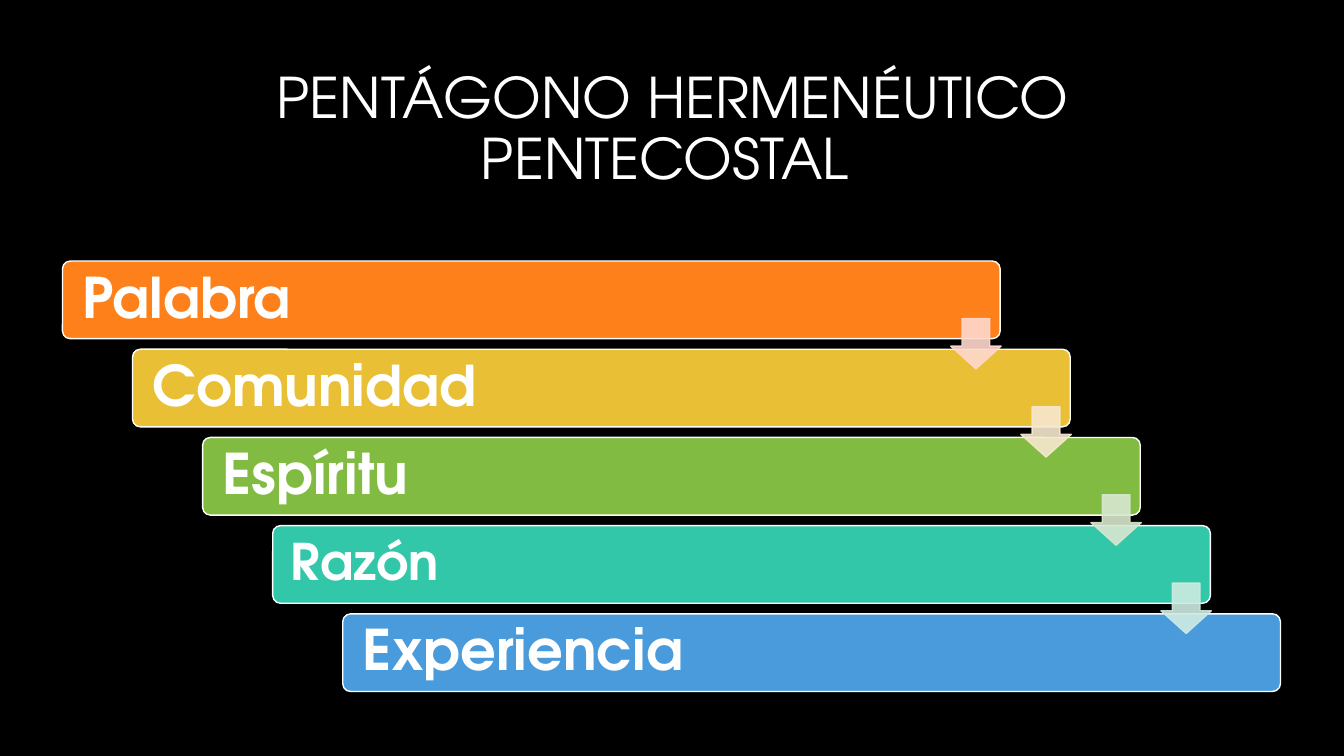
from dataclasses import dataclass

from lxml.etree import SubElement
from pptx import Presentation
from pptx.dml.color import RGBColor
from pptx.enum.shapes import MSO_SHAPE as Preset
from pptx.enum.text import MSO_ANCHOR as Anchor, PP_ALIGN as Align
from pptx.oxml.ns import qn
from pptx.shapes.autoshape import Shape
from pptx.slide import Slide
from pptx.util import Inches, Pt

COLOURS = {
    "black": "000000", "white": "FFFFFF",
    "orange": "FE801A", "yellow": "E9BF35", "green": "81BB42",
    "teal": "32C7A9", "blue": "4A9BDC",
    "pale orange": "FFD8CD", "pale yellow": "F7E8CE",
    "pale green": "D8E7CF", "pale teal": "CEEBE2",
}
FONT = "TeX Gyre Adventor"
BAR_LEFT, BAR_TOP, BAR_WIDTH, BAR_HEIGHT = 0.62, 2.59, 9.3, 0.77
ARROW_LEFT, ARROW_TOP, ARROW_SIZE = 9.43, 3.16, 0.5
STEP_X = (3.4 - BAR_LEFT) / 4
STEP_Y = (6.09 - BAR_TOP) / 4
LABEL_INDENT = 0.03


@dataclass(frozen=True)
class Stage:
    name: str
    colour: str
    arrow_colour: str = ""
    size: int = 40
    inset: float = 0.17
    label_width: float = 8.07


STAGES = [
    Stage("Palabra", "orange", "pale orange", label_width=8.39),
    Stage("Comunidad", "yellow", "pale yellow"),
    Stage("Espíritu", "green", "pale green"),
    Stage("Razón", "teal", "pale teal", size=36, inset=0.15),
    Stage("Experiencia", "blue"),
]


def rgb(colour: str) -> RGBColor:
    return RGBColor.from_string(COLOURS[colour])


def add_text(slide: Slide, text: str, left: float, top: float, width: float,
             height: float, *, size: int = 40, bold: bool = False,
             align: Align = Align.LEFT, inset_x: float = 0.1,
             inset_y: float = 0.05) -> None:
    frame = slide.shapes.add_textbox(
        Inches(left), Inches(top), Inches(width), Inches(height)).text_frame
    frame.word_wrap = True
    frame.vertical_anchor = Anchor.MIDDLE
    frame.margin_left = frame.margin_right = Inches(inset_x)
    frame.margin_top = frame.margin_bottom = Inches(inset_y)
    paragraph = frame.paragraphs[0]
    paragraph.alignment = align
    paragraph.line_spacing = 0.9
    run = paragraph.add_run()
    run.text = text
    run.font.name = FONT
    run.font.size = Pt(size)
    run.font.bold = bold
    run.font.color.rgb = rgb("white")


def add_preset(slide: Slide, preset: Preset, left: float, top: float,
               width: float, height: float, *, fill: str, line: str,
               adjustments: tuple[float, ...]) -> Shape:
    shape = slide.shapes.add_shape(
        preset, Inches(left), Inches(top), Inches(width), Inches(height))
    shape.shadow.inherit = False
    shape.fill.solid()
    shape.fill.fore_color.rgb = rgb(fill)
    shape.line.color.rgb = rgb(line)
    shape.line.width = Pt(1)
    for index, value in enumerate(adjustments):
        shape.adjustments[index] = value
    return shape


def set_opacity(shape: Shape, percent: int) -> None:
    for colour in shape.element.spPr.iter(qn("a:srgbClr")):
        SubElement(colour, qn("a:alpha"), val=str(percent * 1000))


def add_bar(slide: Slide, index: int, stage: Stage) -> None:
    left = BAR_LEFT + index * STEP_X
    top = BAR_TOP + index * STEP_Y
    add_preset(slide, Preset.ROUNDED_RECTANGLE, left, top, BAR_WIDTH,
               BAR_HEIGHT, fill=stage.colour, line="white", adjustments=(0.1,))
    add_text(slide, stage.name, left + LABEL_INDENT, top + LABEL_INDENT,
             stage.label_width, BAR_HEIGHT - 2 * LABEL_INDENT,
             size=stage.size, bold=True,
             inset_x=stage.inset, inset_y=stage.inset)


def add_arrow(slide: Slide, index: int, colour: str) -> None:
    arrow = add_preset(slide, Preset.DOWN_ARROW, ARROW_LEFT + index * STEP_X,
                       ARROW_TOP + index * STEP_Y, ARROW_SIZE, ARROW_SIZE,
                       fill=colour, line=colour, adjustments=(0.55, 0.45))
    set_opacity(arrow, 90)


def main() -> None:
    deck = Presentation()
    deck.slide_width, deck.slide_height = Inches(13.33), Inches(7.5)
    slide = deck.slides.add_slide(deck.slide_layouts[6])
    slide.background.fill.solid()
    slide.background.fill.fore_color.rgb = rgb("black")

    add_text(slide, "PENTÁGONO HERMENÉUTICO PENTECOSTAL ",
             1.56, 0.56, 10.22, 1.48, align=Align.CENTER)
    for index, stage in enumerate(STAGES):
        add_bar(slide, index, stage)
    for index, stage in enumerate(STAGES[:-1]):
        add_arrow(slide, index, stage.arrow_colour)

    deck.save("out.pptx")


if __name__ == "__main__":
    main()
